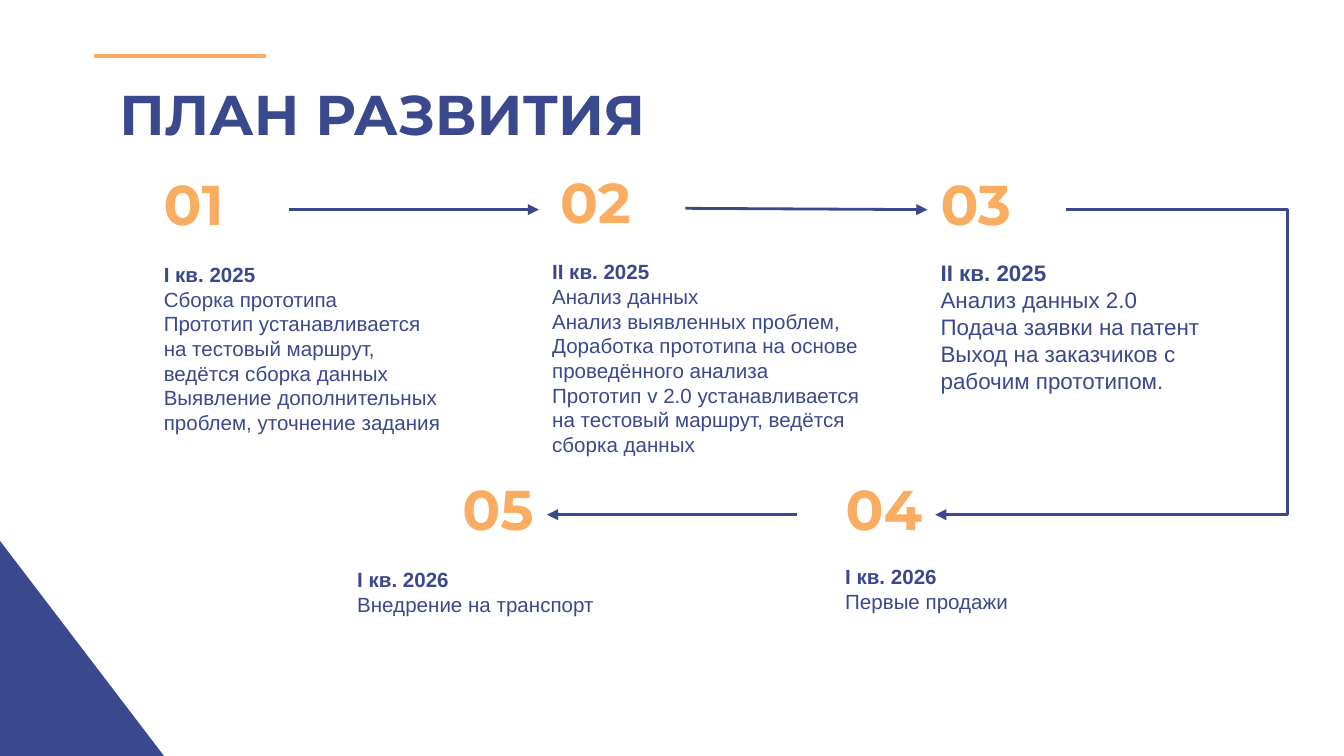
from dataclasses import dataclass

from lxml.etree import SubElement
from pptx import Presentation
from pptx.dml.color import RGBColor
from pptx.enum.shapes import MSO_CONNECTOR as CONN, MSO_SHAPE as SHAPE
from pptx.enum.text import MSO_ANCHOR as ANCHOR, PP_ALIGN as ALIGN
from pptx.oxml.ns import qn
from pptx.util import Inches, Pt


@dataclass(frozen=True)
class Theme:
    blue: RGBColor = RGBColor(0x3A, 0x48, 0x8D)
    orange: RGBColor = RGBColor(0xFA, 0xAD, 0x60)
    heading_font: str = "Montserrat"
    body_font: str = "Arial"
    heading: int = 30
    body: int = 11
    body_large: int = 12
    rule: float = 2.25
    arrow: float = 1.5


T = Theme()

prs = Presentation()
prs.slide_width, prs.slide_height = Inches(10), Inches(10 * 9 / 16)
s = prs.slides.add_slide(prs.slide_layouts[6])


def add_text(box, paragraphs, font, size, color, anchor=ANCHOR.TOP, align=ALIGN.LEFT):
    """Add a text box whose first paragraph is bold; \\v breaks a line."""
    tf = s.shapes.add_textbox(*map(Inches, box)).text_frame
    tf.word_wrap = True
    tf.vertical_anchor = anchor
    tf.margin_left = tf.margin_right = tf.margin_top = tf.margin_bottom = Inches(0.1)
    tf.text = "\n".join(paragraphs)
    for i, p in enumerate(tf.paragraphs):
        p.alignment = align
        for r in p.runs:
            r.font.name, r.font.size, r.font.bold = font, Pt(size), i == 0
            r.font.color.rgb = color
        for br in p._p.findall(qn("a:br")):
            SubElement(br, qn("a:rPr"), sz=str(size * 100))


def add_line(start, end, color, width, kind=CONN.STRAIGHT, arrow=True):
    line = s.shapes.add_connector(kind, *map(Inches, start + end))
    line.line.color.rgb = color
    line.line.width = Pt(width)
    if arrow:
        SubElement(line.line._get_or_add_ln(), qn("a:tailEnd"), type="triangle")
    SubElement(line._element.spPr, qn("a:effectLst"))
    return line


# Decoration and title
add_line((1.98, 0.42), (0.7, 0.42), T.orange, T.rule, arrow=False)
corner_h = Inches(1.6)
corner = s.shapes.add_shape(SHAPE.RIGHT_TRIANGLE, 0, prs.slide_height - corner_h,
                            Inches(1.22), corner_h)
corner.shadow.inherit = False
corner.fill.solid()
corner.fill.fore_color.rgb = T.blue
corner.line.fill.background()
add_text((0.79, 0.49, 8.43, 0.63), ["ПЛАН РАЗВИТИЯ"], T.heading_font, T.heading, T.blue)

# Steps: number, its left and top, its alignment, text box, text size, paragraphs
steps = [
    ("01", 1.12, 1.27, ALIGN.LEFT, (1.12, 1.85, 2.32, 0.93), T.body, [
        "I кв. 2025",
        "Сборка прототипа",
        "Прототип устанавливается на тестовый маршрут, ведётся сборка данных\v"
        "Выявление дополнительных проблем, уточнение задания"]),
    ("02", 4.07, 1.26, ALIGN.LEFT, (4.01, 1.83, 2.51, 1.42), T.body, [
        "II кв. 2025",
        "Анализ данных",
        "Анализ выявленных проблем, Доработка прототипа на основе проведённого анализа\v"
        "Прототип v 2.0 устанавливается на тестовый маршрут, ведётся сборка данных"]),
    ("03", 6.9, 1.27, ALIGN.LEFT, (6.9, 1.83, 2.22, 0.93), T.body_large, [
        "II кв. 2025",
        "Анализ данных 2.0\vПодача заявки на патент\v"
        "Выход на заказчиков с рабочим прототипом."]),
    ("04", 5.93, 3.54, ALIGN.RIGHT, (6.19, 4.1, 1.98, 0.93), T.body, [
        "I кв. 2026",
        "Первые продажи"]),
    ("05", 3.04, 3.54, ALIGN.RIGHT, (2.56, 4.12, 2.23, 0.93), T.body, [
        "I кв. 2026",
        "Внедрение на транспорт"]),
]
for number, left, top, align, box, size, paragraphs in steps:
    add_text((left, top, 1.03, 0.59), [number], T.heading_font, T.heading, T.orange,
             ANCHOR.BOTTOM, align)
    add_text(box, paragraphs, T.body_font, size, T.blue)

# Arrows from step to step
for start, end in [((2.15, 1.56), (4.01, 1.56)),
                   ((5.1, 1.55), (6.9, 1.56)),
                   ((5.93, 3.83), (4.07, 3.83))]:
    add_line(start, end, T.blue, T.arrow)

# The turn from 03 to 04 runs out to the right margin
start, end, turn_x = (7.93, 1.56), (6.96, 3.83), 9.58
turn = add_line(start, end, T.blue, T.arrow, CONN.ELBOW)
bend = round((turn_x - start[0]) / (end[0] - start[0]) * 100000)
guides = turn._element.spPr.find(qn("a:prstGeom")).get_or_add_avLst()
SubElement(guides, qn("a:gd"), name="adj1", fmla=f"val {bend}")

prs.save("out.pptx")
